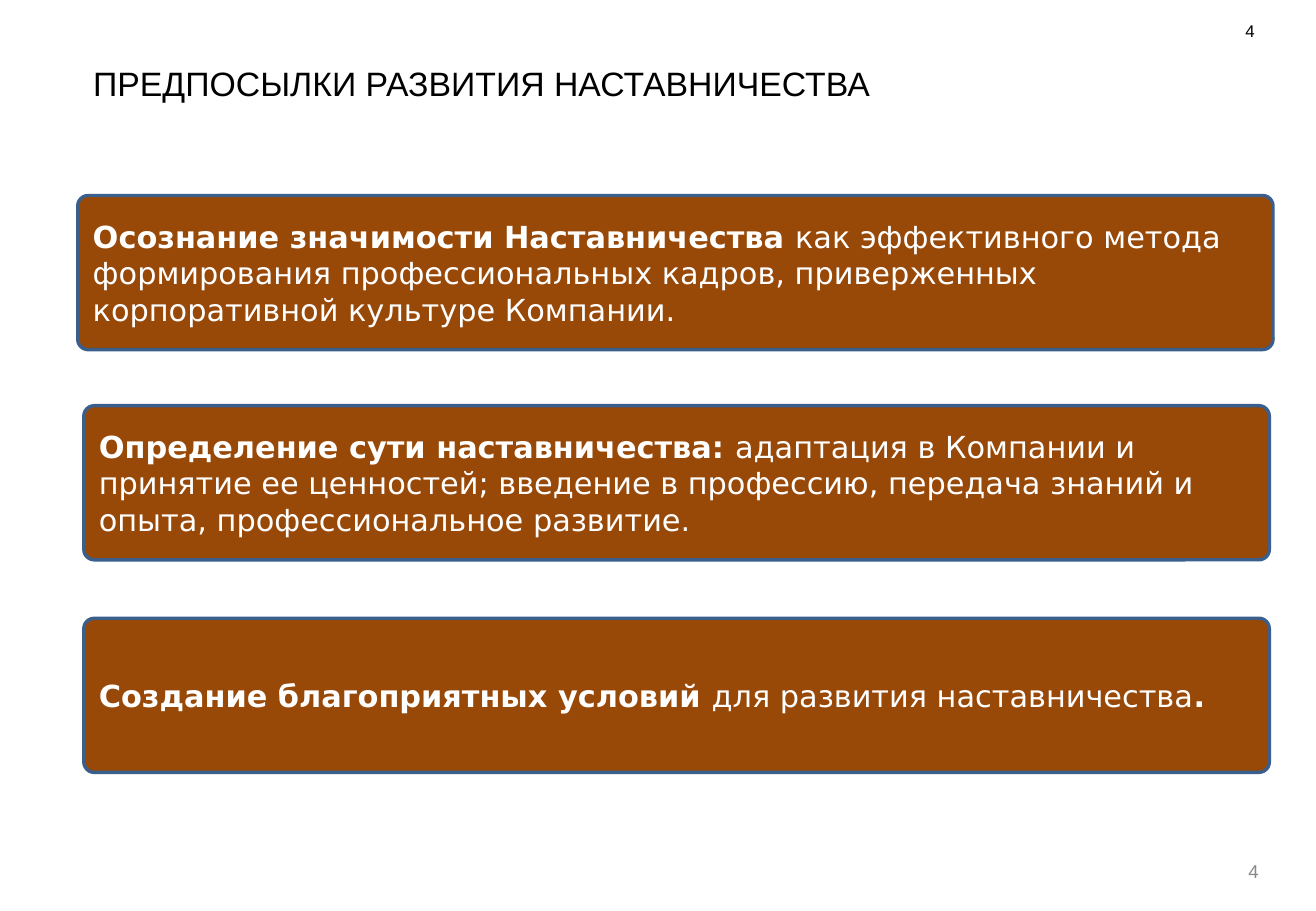
from pptx import Presentation
from pptx.dml.color import RGBColor
from pptx.enum.shapes import MSO_SHAPE
from pptx.enum.text import MSO_ANCHOR, PP_ALIGN
from pptx.util import Pt

ROUNDED = MSO_SHAPE.ROUNDED_RECTANGLE
TOP, MIDDLE = MSO_ANCHOR.TOP, MSO_ANCHOR.MIDDLE
LEFT, CENTER, RIGHT = PP_ALIGN.LEFT, PP_ALIGN.CENTER, PP_ALIGN.RIGHT

COLORS = {
    "text": "000000",
    "footer": "898989",
    "card": "984807",
    "border": "3A5F8C",
    "card_text": "FFFFFF",
}
CARD_HEIGHT = 91.4
PREREQUISITES = [
    ((46.1, 115.9, 708.5, CARD_HEIGHT), [
        ("Осознание значимости Наставничества ", True),
        ("как эффективного метода формирования профессиональных кадров, "
         "приверженных корпоративной культуре Компании.", False),
    ]),
    ((49.7, 240.5, 702.7, CARD_HEIGHT), [
        ("Определение сути наставничества: ", True),
        ("адаптация в Компании и принятие ее ценностей; введение в профессию, "
         "передача знаний и опыта, профессиональное развитие.", False),
    ]),
    ((49.7, 366.5, 702.7, CARD_HEIGHT), [
        ("Создание благоприятных условий ", True),
        ("для развития наставничества", False),
        (".", True),
    ]),
]


def color(name):
    """Return the named palette colour."""
    return RGBColor.from_string(COLORS[name])


def style(paragraph, font_name, size, color_name, align):
    """Set the font and alignment of a paragraph."""
    paragraph.alignment = align
    paragraph.font.name = font_name
    paragraph.font.size = Pt(size)
    paragraph.font.color.rgb = color(color_name)


def add_label(slide, box, text, size, color_name, align, anchor, margins=(7.2, 3.6)):
    """Place a single line of plain text in the box."""
    label = slide.shapes.add_textbox(*map(Pt, box))
    frame = label.text_frame
    frame.word_wrap = True
    frame.vertical_anchor = anchor
    frame.margin_left = frame.margin_right = Pt(margins[0])
    frame.margin_top = frame.margin_bottom = Pt(margins[1])
    frame.text = text
    style(frame.paragraphs[0], "Arial", size, color_name, align)


def add_prerequisite(slide, box, phrases):
    """Place a rounded card with its bold and regular phrases in the box."""
    card = slide.shapes.add_shape(ROUNDED, *map(Pt, box))
    card.adjustments[0] = 0.068
    card.shadow.inherit = False
    card.fill.solid()
    card.fill.fore_color.rgb = color("card")
    card.line.color.rgb = color("border")
    card.line.width = Pt(2)
    frame = card.text_frame
    frame.word_wrap = True
    frame.vertical_anchor = MIDDLE
    statement = frame.paragraphs[0]
    style(statement, "DejaVu Sans", 18, "card_text", LEFT)
    for text, bold in phrases:
        phrase = statement.add_run()
        phrase.text = text
        phrase.font.bold = bold


def main():
    """Build the slide on the prerequisites of mentoring and save it."""
    deck = Presentation()
    deck.slide_width, deck.slide_height = Pt(780), Pt(540)
    slide = deck.slides.add_slide(deck.slide_layouts[6])
    add_label(slide, (702, 12.2, 77.8, 46.8), "4", 10, "text", CENTER, TOP, (0, 0))
    add_label(slide, (48.1, 28.8, 653.9, 40.3), "ПРЕДПОСЫЛКИ РАЗВИТИЯ НАСТАВНИЧЕСТВА",
              20, "text", LEFT, MIDDLE)
    add_label(slide, (571, 501.8, 182.2, 28.8), "4", 11, "footer", RIGHT, MIDDLE)
    for box, phrases in PREREQUISITES:
        add_prerequisite(slide, box, phrases)
    deck.save("out.pptx")


if __name__ == "__main__":
    main()
